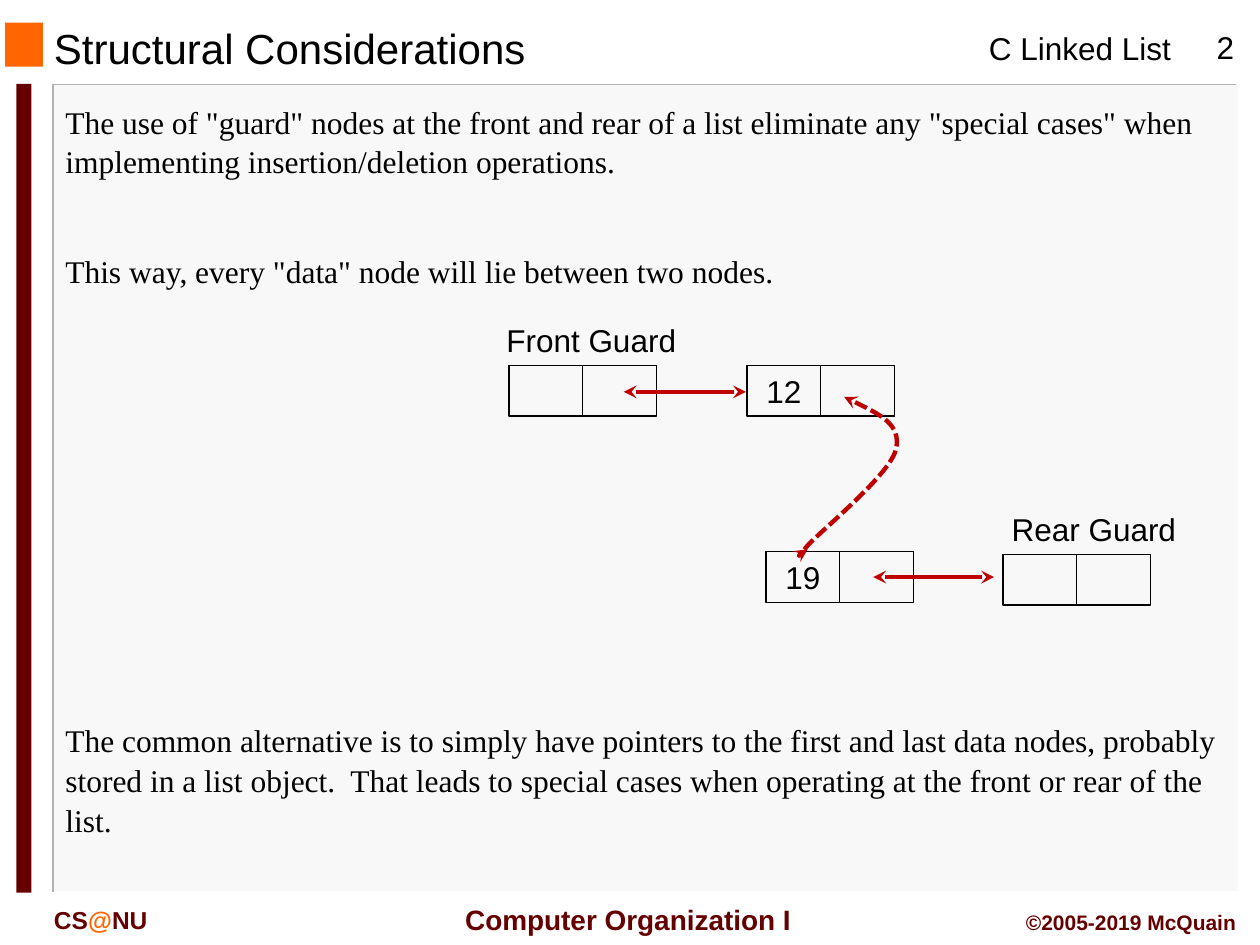
from lxml import etree
from pptx import Presentation
from pptx.dml.color import RGBColor
from pptx.enum.dml import MSO_LINE
from pptx.enum.shapes import MSO_CONNECTOR, MSO_SHAPE
from pptx.enum.text import MSO_ANCHOR, PP_ALIGN
from pptx.oxml.ns import qn
from pptx.util import Inches, Pt

LEFT, CENTER, RIGHT = PP_ALIGN.LEFT, PP_ALIGN.CENTER, PP_ALIGN.RIGHT
TOP, MIDDLE = MSO_ANCHOR.TOP, MSO_ANCHOR.MIDDLE
RECTANGLE, STRAIGHT = MSO_SHAPE.RECTANGLE, MSO_CONNECTOR.STRAIGHT
DASH = MSO_LINE.SQUARE_DOT

COLORS = {
    "panel": "F8F8F8", "edge": "B2B2B2", "white": "FFFFFF", "orange": "FF6600",
    "maroon": "660000", "black": "000000", "arrow": "C00000",
}
COLORS = {name: RGBColor.from_string(value) for name, value in COLORS.items()}

deck = Presentation()
deck.slide_width, deck.slide_height = Inches(10), Inches(7.5)
page = deck.slides.add_slide(deck.slide_layouts[6])
shapes = page.shapes

# The page is a grid of 100 columns by 75 rows.
COLUMN = deck.slide_width / 100
ROW = deck.slide_height / 75


def on_grid(*numbers):
    """Turn alternating column and row numbers into lengths."""
    return [round(n * (ROW if i % 2 else COLUMN)) for i, n in enumerate(numbers)]


def add_text(place, paragraphs, size, font="Arial", color="black", bold=False,
             align=LEFT, anchor=TOP, wrap=True, spacing=None, gap=0):
    """Add a text box; each paragraph is a list of (text, color) spans."""
    frame = shapes.add_textbox(*on_grid(*place)).text_frame
    frame.word_wrap, frame.vertical_anchor = wrap, anchor
    for index, spans in enumerate(paragraphs):
        para = frame.paragraphs[0] if index == 0 else frame.add_paragraph()
        para.alignment, para.line_spacing = align, spacing
        para.space_before = Pt(gap if index else 0)
        para.font.name, para.font.size, para.font.bold = font, Pt(size), bold
        for text, span_color in spans:
            span = para.add_run()
            span.text = text
            span.font.color.rgb = COLORS[span_color or color]


# Panel, title square and side bar
for place, color in [
    ((4.3, 6.7, 94, 64.1), "panel"),
    ((0.4, 1.8, 3, 3.5), "orange"),
    ((1.3, 6.65, 1.2, 64.2), "maroon"),
]:
    block = shapes.add_shape(RECTANGLE, *on_grid(*place))
    block.shadow.inherit = False
    block.fill.solid()
    block.fill.fore_color.rgb = COLORS[color]
    block.line.fill.background()

# Header and footer
add_text((3.3, 1.9, 63.3, 3.8), [[("Structural Considerations", None)]], 24, anchor=MIDDLE)
add_text((77.5, 1.8, 16.6, 4), [[("C Linked List", None)]], 18, wrap=False)
add_text((93.9, 1.7, 6.7, 4), [[("2", None)]], 18, align=CENTER)
add_text((3.3, 71.3, 15, 3.3), [[("CS", None), ("@", "orange"), ("NU", None)]],
         14, color="maroon", bold=True)
add_text((35.3, 71.1, 29.1, 3.7), [[("Computer Organization I", None)]], 16,
         color="maroon", bold=True, align=CENTER, anchor=MIDDLE, wrap=False)
add_text((78.3, 71.7, 20.8, 3), [[("©2005-2019 McQuain", None)]], 12,
         color="maroon", bold=True, align=RIGHT)

# List nodes, each with a data cell and a pointer cell
CELL_WIDTH, CELL_HEIGHT = 5.85, 4.03
for left, top, data in [(40.4, 29, ""), (79.6, 44, ""), (60.8, 43.8, "19"), (59.3, 29, "12")]:
    for index, text in enumerate([data, ""]):
        cell = shapes.add_shape(
            RECTANGLE, *on_grid(left + index * CELL_WIDTH, top, CELL_WIDTH, CELL_HEIGHT))
        cell.shadow.inherit = False
        cell.fill.background()
        cell.line.color.rgb, cell.line.width = COLORS["black"], Pt(0.75)
        if text:
            para = cell.text_frame.paragraphs[0]
            para.text, para.alignment = text, CENTER
            para.font.name, para.font.size = "Arial", Pt(18)
            para.font.color.rgb = COLORS["black"]
for left, top, label in [(39.2, 25, "Front Guard"), (79.3, 40, "Rear Guard")]:
    add_text((left, top, 15.8, 4), [[(label, None)]], 18)

# Panel edges and straight links
links = []
for ends, color, width in [
    ((4.2, 6.7, 98.1, 6.7), "edge", 1),
    ((4.2, 6.7, 4.2, 70.8), "edge", 1),
    ((98.3, 6.7, 98.3, 70.8), "white", 1),
    ((4.4, 70.8, 98.3, 70.8), "white", 1),
    ((49.5, 31.1, 59.2, 31.1), "arrow", 2.5),
    ((69.3, 45.8, 78.9, 45.8), "arrow", 2.5),
]:
    line = shapes.add_connector(STRAIGHT, *on_grid(*ends))
    etree.SubElement(line._element.spPr, qn("a:effectLst"))
    line.line.color.rgb, line.line.width = COLORS[color], Pt(width)
    if color == "arrow":
        links.append(line)

# Curved link: a start point, then three points for each Bezier segment
start, *points = [on_grid(*point) for point in [
    (67, 31.5),
    (69.3, 32.6), (71.6, 33.7), (71.1, 35.7),
    (70.6, 37.7), (65.3, 42), (64.1, 43.3),
    (63, 44.6), (63.5, 44.1), (64.1, 43.6),
]]
builder = shapes.build_freeform(*start, scale=1.0)
builder.add_line_segments(points, close=False)
curve = builder.convert_to_shape()
curve.shadow.inherit = False
curve.fill.background()
curve.line.color.rgb, curve.line.width = COLORS["arrow"], Pt(2.5)
curve.line.dash_style = DASH
outline = curve._element.find(".//" + qn("a:path"))
steps = outline.findall(qn("a:lnTo"))
for index in range(0, len(steps), 3):
    bezier = etree.SubElement(outline, qn("a:cubicBezTo"))
    for step in steps[index:index + 3]:
        bezier.append(step[0])
        outline.remove(step)
links.append(curve)

for link in links:
    for end in ("a:headEnd", "a:tailEnd"):
        etree.SubElement(link.line._get_or_add_ln(), qn(end), type="stealth")

# Body text
BODY = {"size": 18, "font": "Times New Roman", "spacing": 1.05}
add_text((4.2, 7.5, 94.2, 16.2), [
    [('The use of "guard" nodes at the front and rear of a list eliminate any '
      '"special cases" when implementing insertion/deletion operations.', None)],
    [('This way, every "data" node will lie between two nodes.', None)],
], gap=40, **BODY)
add_text((4.2, 56.6, 94.2, 10.1), [
    [("The common alternative is to simply have pointers to the first and last data nodes, "
      "probably stored in a list object.  That leads to special cases when operating at "
      "the front or rear of the list.", None)],
], **BODY)

deck.save("out.pptx")
